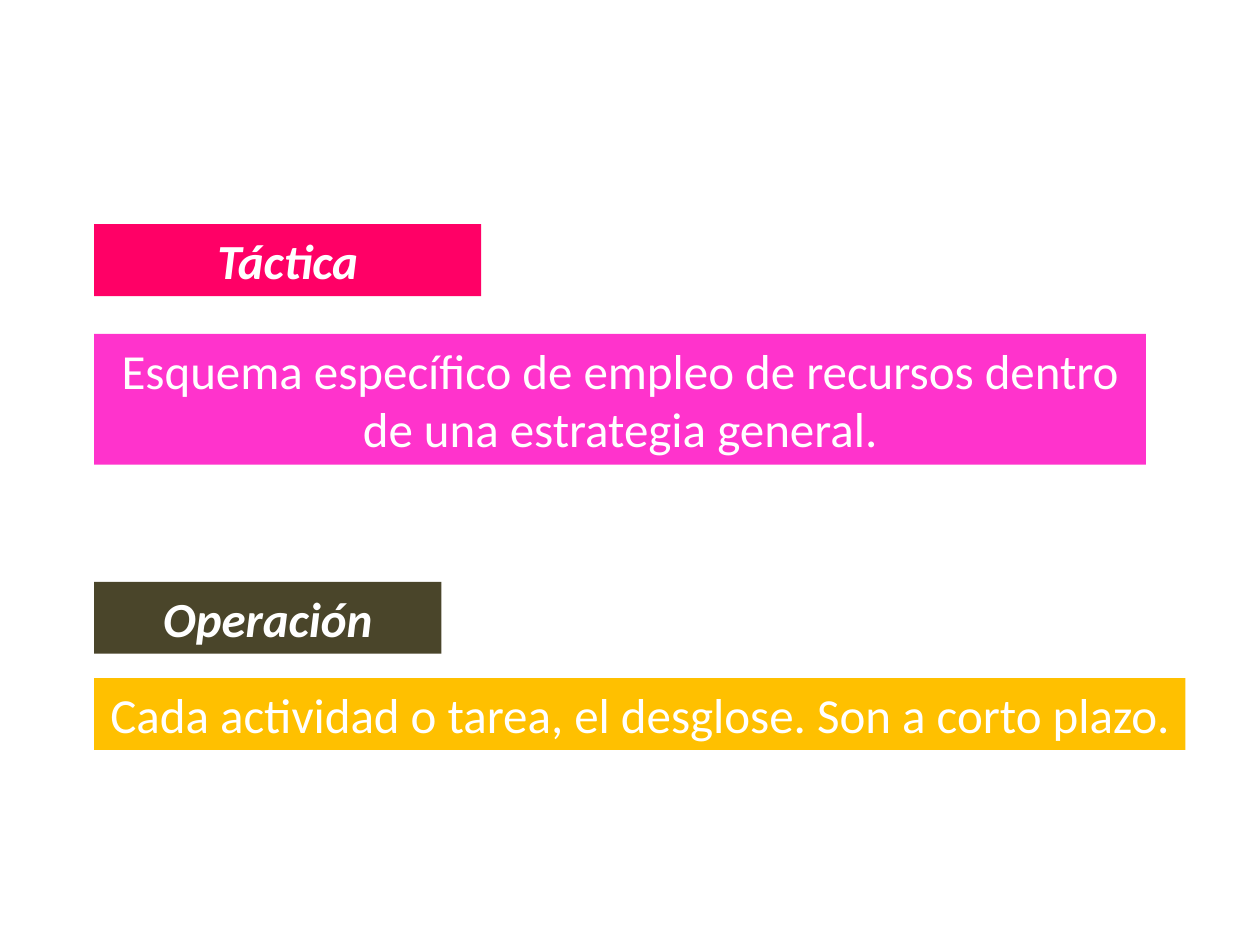
from pptx import Presentation
from pptx.dml.color import RGBColor
from pptx.enum.shapes import MSO_SHAPE as Shape
from pptx.enum.text import MSO_ANCHOR as Anchor, MSO_AUTO_SIZE as AutoSize, PP_ALIGN as Align
from pptx.util import Cm, Pt

LEFT = 1.9
LINE_HEIGHT = 1.45
TWO_LINE_HEIGHT = 2.64


def color(hex_code):
    """Return the colour for a hex string."""
    return RGBColor.from_string(hex_code)


def add_band(slide, text, top, width, fill, height=LINE_HEIGHT, heading=False):
    """Add a filled rectangle with centred white text, measured in centimetres."""
    band = slide.shapes.add_shape(Shape.RECTANGLE, Cm(LEFT), Cm(top), Cm(width), Cm(height))
    band.shadow.inherit = False
    band.fill.solid()
    band.fill.fore_color.rgb = color(fill)
    band.line.fill.background()
    frame = band.text_frame
    frame.word_wrap = True
    frame.auto_size = AutoSize.SHAPE_TO_FIT_TEXT
    frame.vertical_anchor = Anchor.TOP
    paragraph = frame.paragraphs[0]
    paragraph.alignment = Align.CENTER
    run = paragraph.add_run()
    run.text = text
    font = run.font
    font.name = "Calibri"
    font.size = Pt(28)
    font.bold = font.italic = heading
    font.color.rgb = color("FFFFFF")


def main():
    """Build the slide with both terms and their definitions."""
    deck = Presentation()
    deck.slide_width, deck.slide_height = Cm(25.4), Cm(19.05)
    slide = deck.slides.add_slide(deck.slide_layouts[6])
    add_band(slide, "Táctica", 4.52, 7.8, "FF0066", heading=True)
    add_band(slide, "Esquema específico de empleo de recursos dentro de una estrategia general.",
             6.73, 21.2, "FF33CC", height=TWO_LINE_HEIGHT)
    add_band(slide, "Operación", 11.73, 7, "4A452A", heading=True)
    add_band(slide, "Cada actividad o tarea, el desglose. Son a corto plazo.", 13.67, 22, "FFC000")
    deck.save("out.pptx")


if __name__ == "__main__":
    main()
